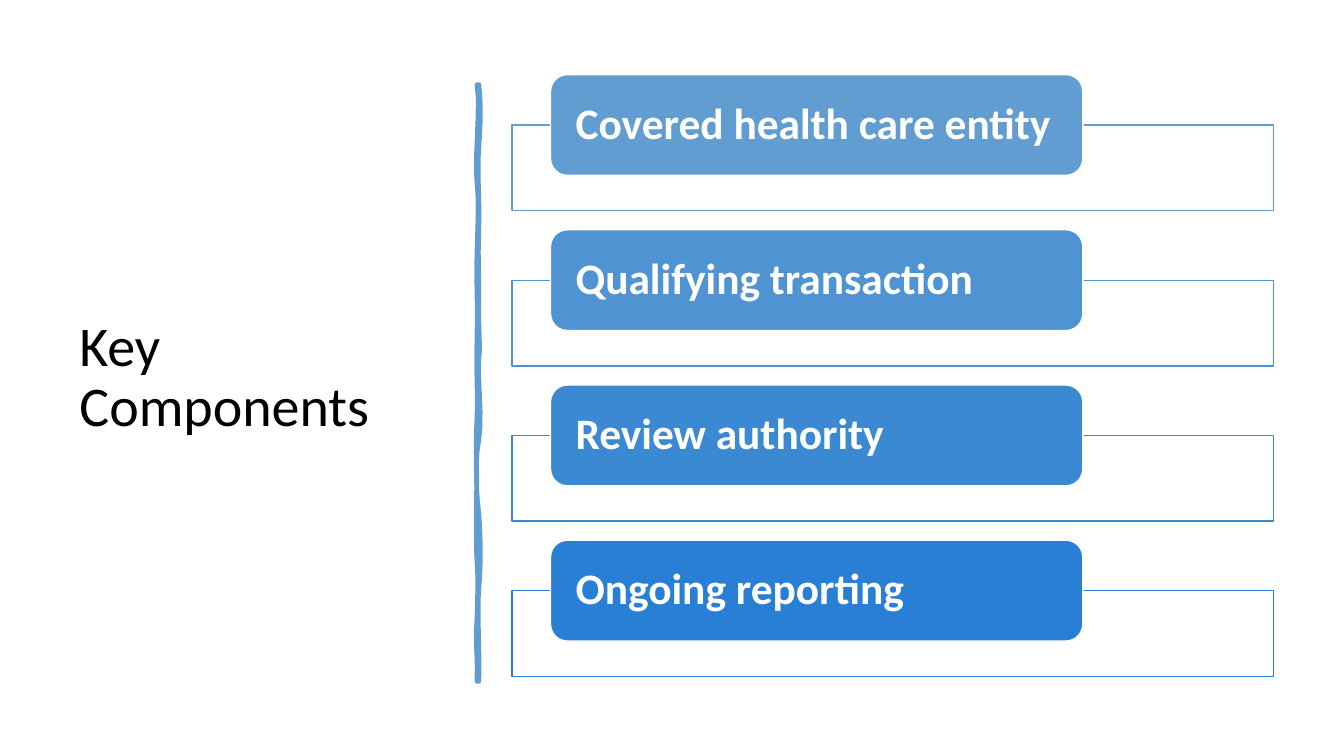
from dataclasses import dataclass

from lxml import etree
from pptx import Presentation
from pptx.dml.color import RGBColor
from pptx.enum.shapes import MSO_SHAPE
from pptx.enum.text import MSO_ANCHOR, PP_ALIGN
from pptx.oxml.ns import qn
from pptx.util import Inches, Pt

RECTANGLE = MSO_SHAPE.RECTANGLE
ROUNDED_RECTANGLE = MSO_SHAPE.ROUNDED_RECTANGLE
MIDDLE = MSO_ANCHOR.MIDDLE
LEFT = PP_ALIGN.LEFT

FONT = "Calibri"
BLACK = "000000"
WHITE = "FFFFFF"
RULE_COLOR = "629DD1"
FIRST_TOP = 0.74
ROW_PITCH = 1.54
CURVE_STEPS = 6


@dataclass
class Component:
    label: str
    color: str


@dataclass
class Curve:
    """Cubic curve: two control points and the end point, in inches."""
    first: tuple[float, float]
    second: tuple[float, float]
    end: tuple[float, float]


COMPONENTS = [
    Component("Covered health care entity", "629DD1"),
    Component("Qualifying transaction", "5093D2"),
    Component("Review authority", "3C89D3"),
    Component("Ongoing reporting", "297FD5"),
]

# Hand-drawn rule: down its right edge, then up its left edge
RULE_START = (4.75, 0.84)
RULE_CURVES = [
    Curve((4.77, 1.02), (4.77, 1.19), (4.75, 1.46)),
    Curve((4.73, 1.73), (4.76, 1.95), (4.75, 2.26)),
    Curve((4.74, 2.57), (4.75, 2.62), (4.75, 2.94)),
    Curve((4.74, 3.25), (4.77, 3.42), (4.75, 3.56)),
    Curve((4.73, 3.7), (4.79, 4.14), (4.75, 4.36)),
    Curve((4.71, 4.57), (4.72, 4.84), (4.75, 5.1)),
    Curve((4.77, 5.36), (4.77, 5.64), (4.75, 5.84)),
    Curve((4.73, 6.03), (4.76, 6.5), (4.75, 6.76)),
    Curve((4.74, 6.76), (4.73, 6.76), (4.73, 6.76)),
    Curve((4.74, 6.46), (4.71, 6.44), (4.73, 6.13)),
    Curve((4.74, 5.83), (4.74, 5.7), (4.73, 5.57)),
    Curve((4.72, 5.44), (4.72, 4.95), (4.73, 4.77)),
    Curve((4.73, 4.59), (4.71, 4.45), (4.73, 4.15)),
    Curve((4.74, 3.86), (4.72, 3.73), (4.73, 3.35)),
    Curve((4.74, 2.98), (4.72, 2.81), (4.73, 2.5)),
    Curve((4.74, 2.18), (4.75, 2), (4.73, 1.81)),
    Curve((4.7, 1.63), (4.77, 1.04), (4.73, 0.84)),
]


def rgb(color: str) -> RGBColor:
    return RGBColor.from_string(color)


def paint(shape, fill: str, line: str, line_width: float) -> None:
    shape.shadow.inherit = False
    shape.fill.solid()
    shape.fill.fore_color.rgb = rgb(fill)
    shape.line.color.rgb = rgb(line)
    shape.line.width = Pt(line_width)


def write(shape, text: str, size: float, color: str, bold: bool = False) -> None:
    text_frame = shape.text_frame
    text_frame.word_wrap = True
    text_frame.vertical_anchor = MIDDLE
    text_frame.text = text
    paragraph = text_frame.paragraphs[0]
    paragraph.alignment = LEFT
    paragraph.line_spacing = 0.9
    font = paragraph.runs[0].font
    font.name = FONT
    font.size = Pt(size)
    font.bold = bold
    font.color.rgb = rgb(color)


def curve_points(start: tuple[float, float], curves: list[Curve]) -> list[tuple[int, int]]:
    points = []
    for curve in curves:
        for step in range(1, CURVE_STEPS + 1):
            t = step / CURVE_STEPS
            x, y = (
                (1 - t) ** 3 * a + 3 * (1 - t) ** 2 * t * b + 3 * (1 - t) * t ** 2 * c + t ** 3 * d
                for a, b, c, d in zip(start, curve.first, curve.second, curve.end)
            )
            points.append((Inches(x), Inches(y)))
        start = curve.end
    return points


def draw_rule(slide) -> None:
    builder = slide.shapes.build_freeform(*(Inches(value) for value in RULE_START))
    builder.add_line_segments(curve_points(RULE_START, RULE_CURVES), close=True)
    rule = builder.convert_to_shape()
    paint(rule, RULE_COLOR, RULE_COLOR, 3.25)
    etree.SubElement(rule.line._get_or_add_ln(), qn("a:round"))


def draw_component(slide, component: Component, top: float) -> None:
    # Outlined panel behind the label
    panel = slide.shapes.add_shape(
        RECTANGLE, Inches(5.08), Inches(top + 0.5), Inches(7.55), Inches(0.85))
    paint(panel, WHITE, component.color, 1)
    fill_color = panel._element.spPr.find(qn("a:solidFill"))[0]
    etree.SubElement(fill_color, qn("a:alpha"), val="90000")

    # Coloured label
    label = slide.shapes.add_shape(
        ROUNDED_RECTANGLE, Inches(5.46), Inches(top), Inches(5.28), Inches(1))
    paint(label, component.color, WHITE, 1)
    write(label, component.label, 31, WHITE, bold=True)
    text_frame = label.text_frame
    text_frame.margin_left = text_frame.margin_right = Inches(0.2)
    text_frame.margin_top = text_frame.margin_bottom = 0


def main() -> None:
    presentation = Presentation()
    presentation.slide_width = Inches(13.33)
    presentation.slide_height = Inches(7.5)
    slide = presentation.slides.add_slide(presentation.slide_layouts[6])

    # Title and rule
    title = slide.shapes.add_textbox(Inches(0.69), Inches(0.7), Inches(3.74), Inches(6.11))
    write(title, "Key Components", 40, BLACK)
    draw_rule(slide)

    # Component rows
    for index, component in enumerate(COMPONENTS):
        draw_component(slide, component, FIRST_TOP + index * ROW_PITCH)

    presentation.save("out.pptx")


if __name__ == "__main__":
    main()
